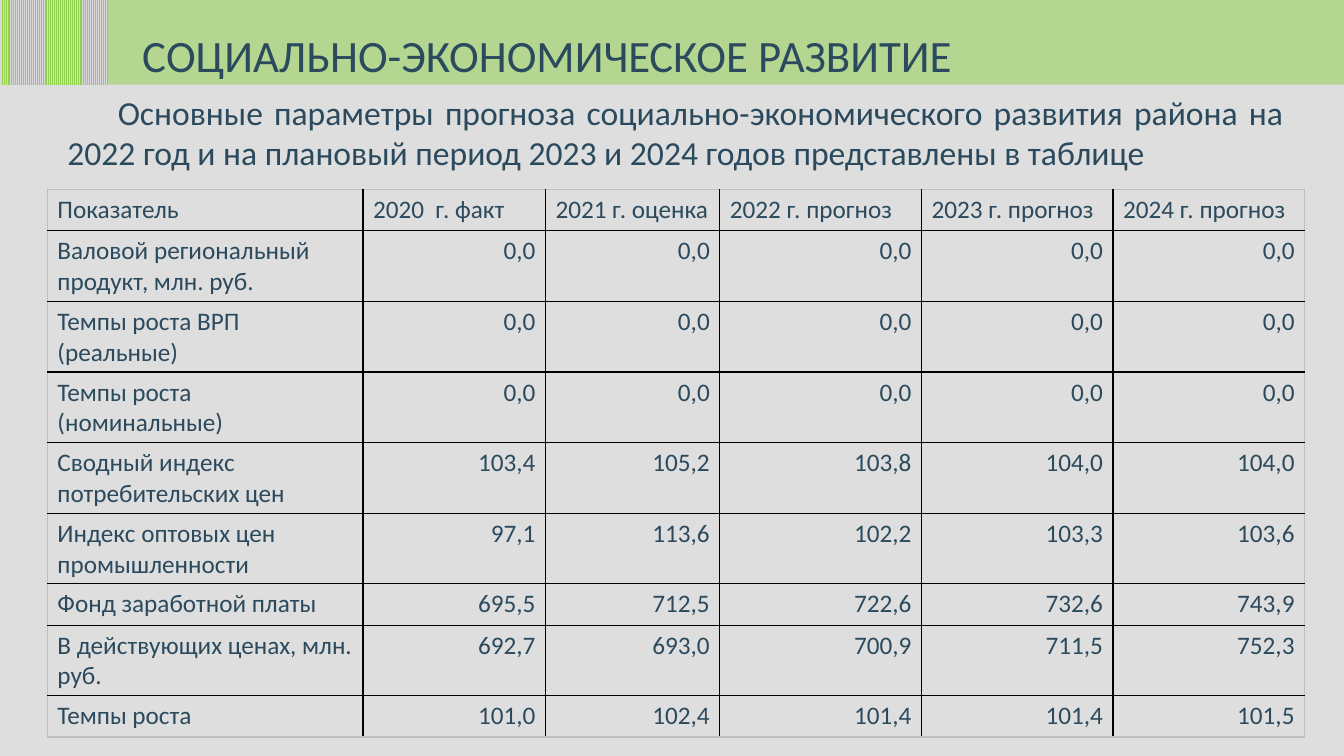
from lxml import etree
from pptx import Presentation
from pptx.dml.color import RGBColor
from pptx.enum.dml import MSO_PATTERN
from pptx.enum.shapes import MSO_SHAPE
from pptx.enum.text import MSO_ANCHOR, MSO_AUTO_SIZE, PP_ALIGN
from pptx.oxml.ns import qn
from pptx.util import Inches, Pt

RECTANGLE = MSO_SHAPE.RECTANGLE
STRIPES = MSO_PATTERN.LIGHT_VERTICAL
TOP = MSO_ANCHOR.TOP
FIT_SHAPE = MSO_AUTO_SIZE.SHAPE_TO_FIT_TEXT
LEFT, RIGHT, JUSTIFY = PP_ALIGN.LEFT, PP_ALIGN.RIGHT, PP_ALIGN.JUSTIFY

WIDTH, HEIGHT = 13.33, 7.5
BAND_HEIGHT = 0.84
FONT = "Calibri"
INK, GREEN, GREY, PAPER = "2B4A5E", "92D050", "D9D9D9", "DEDEDE"
GRID_LINE, FRAME_LINE = "000000", "BFBFBF"

TITLE = "СОЦИАЛЬНО-ЭКОНОМИЧЕСКОЕ РАЗВИТИЕ"
INTRO = ("Основные параметры прогноза социально-экономического развития района "
         "на 2022 год и на плановый период 2023 и 2024 годов представлены в таблице")
COLUMN_WIDTHS = [3.13, 1.81, 1.73, 2, 1.9, 1.9]
ONE_LINE, TWO_LINES = 0.41, 0.7
HEADER = ["Показатель", "2020  г. факт", "2021 г. оценка",
          "2022 г. прогноз", "2023 г. прогноз", "2024 г. прогноз"]
NO_DATA = ["0,0"] * 5
# Each row: its height and its cells
ROWS = [
    (ONE_LINE, HEADER),
    (TWO_LINES, ["Валовой региональный продукт, млн. руб.", *NO_DATA]),
    (TWO_LINES, ["Темпы роста ВРП (реальные)", *NO_DATA]),
    (TWO_LINES, ["Темпы роста (номинальные)", *NO_DATA]),
    (TWO_LINES, ["Сводный индекс потребительских цен",
                 "103,4", "105,2", "103,8", "104,0", "104,0"]),
    (TWO_LINES, ["Индекс оптовых цен промышленности",
                 "97,1", "113,6", "102,2", "103,3", "103,6"]),
    (ONE_LINE, ["Фонд заработной платы",
                "695,5", "712,5", "722,6", "732,6", "743,9"]),
    (TWO_LINES, ["В действующих ценах, млн. руб.",
                 "692,7", "693,0", "700,9", "711,5", "752,3"]),
    (ONE_LINE, ["Темпы роста", "101,0", "102,4", "101,4", "101,4", "101,5"]),
]


def color(value):
    return RGBColor.from_string(value)


def write(frame, text, size, alignment=LEFT):
    """Put one formatted paragraph into a text frame."""
    para = frame.paragraphs[0]
    para.alignment = alignment
    span = para.add_run()
    span.text = text
    for name, value in {"name": FONT, "size": Pt(size), "bold": False}.items():
        setattr(span.font, name, value)
    span.font.color.rgb = color(INK)
    return para


def set_frame(frame, wrap):
    settings = {"word_wrap": wrap, "auto_size": FIT_SHAPE, "vertical_anchor": TOP}
    for name, value in settings.items():
        setattr(frame, name, value)


def add_band(page, width):
    band = page.shapes.add_shape(RECTANGLE, 0, 0, Inches(width), Inches(BAND_HEIGHT))
    band.shadow.inherit = False
    band.line.fill.background()
    return band


def fill_translucent(shape, value, percent):
    shape.fill.solid()
    shape.fill.fore_color.rgb = color(value)
    tint = shape.element.spPr.find(qn("a:solidFill"))[0]
    etree.SubElement(tint, qn("a:alpha")).set("val", str(percent * 1000))


def fill_stripes(shape):
    shape.fill.patterned()
    shape.fill.pattern = STRIPES
    shape.fill.fore_color.rgb = color(GREEN)
    shape.fill.back_color.rgb = color(GREY)


def add_heading(page):
    """Place the title in front of the translucent band."""
    title = page.shapes.title
    places = {"left": 1.31, "top": 0.22, "width": 8.31, "height": 0.64}
    for name, value in places.items():
        setattr(title, name, Inches(value))
    set_frame(title.text_frame, False)
    write(title.text_frame, TITLE, 32)
    band = add_band(page, WIDTH)
    fill_translucent(band, GREEN, 54)
    title.element.addprevious(band.element)
    fill_stripes(add_band(page, WIDTH * 0.08))


def add_intro(page):
    box = page.shapes.add_textbox(Inches(0.57), Inches(0.86), Inches(12.26), Inches(0.91))
    set_frame(box.text_frame, True)
    para = write(box.text_frame, INTRO, 24, JUSTIFY)
    properties = para._p.get_or_add_pPr()
    properties.set("marL", "0")
    properties.set("indent", str(Inches(0.5)))


def add_borders(cell, sides):
    """Draw the cell's borders; sides maps a side to its colour."""
    properties = cell._tc.get_or_add_tcPr()
    for side, value in sides.items():
        line = etree.SubElement(properties, qn(f"a:ln{side}"), w=str(Pt(1)))
        fill = etree.SubElement(line, qn("a:solidFill"))
        etree.SubElement(fill, qn("a:srgbClr"), val=value)


def add_forecast_table(page):
    heights = [height for height, _ in ROWS]
    last_row, last_column = len(ROWS) - 1, len(COLUMN_WIDTHS) - 1
    table = page.shapes.add_table(
        len(ROWS), len(COLUMN_WIDTHS), Inches(0.47), Inches(1.88),
        Inches(sum(COLUMN_WIDTHS)), Inches(sum(heights))).table
    table.first_row = table.horz_banding = False
    for column, width in zip(table.columns, COLUMN_WIDTHS):
        column.width = Inches(width)
    for row_index, (height, texts) in enumerate(ROWS):
        table.rows[row_index].height = Inches(height)
        for column_index, text in enumerate(texts):
            cell = table.cell(row_index, column_index)
            is_number = row_index > 0 and column_index > 0
            write(cell.text_frame, text, 18, RIGHT if is_number else LEFT)
            on_frame = {"L": column_index == 0, "R": column_index == last_column,
                        "T": row_index == 0, "B": row_index == last_row}
            add_borders(cell, {side: FRAME_LINE if outer else GRID_LINE
                               for side, outer in on_frame.items()})
            cell.fill.background()


def main():
    deck = Presentation()
    deck.slide_width, deck.slide_height = Inches(WIDTH), Inches(HEIGHT)
    page = deck.slides.add_slide(deck.slide_layouts.get_by_name("Title Only"))
    page.background.fill.solid()
    page.background.fill.fore_color.rgb = color(PAPER)

    # Heading band, introduction, table
    add_heading(page)
    add_intro(page)
    add_forecast_table(page)
    deck.save("out.pptx")


if __name__ == "__main__":
    main()
